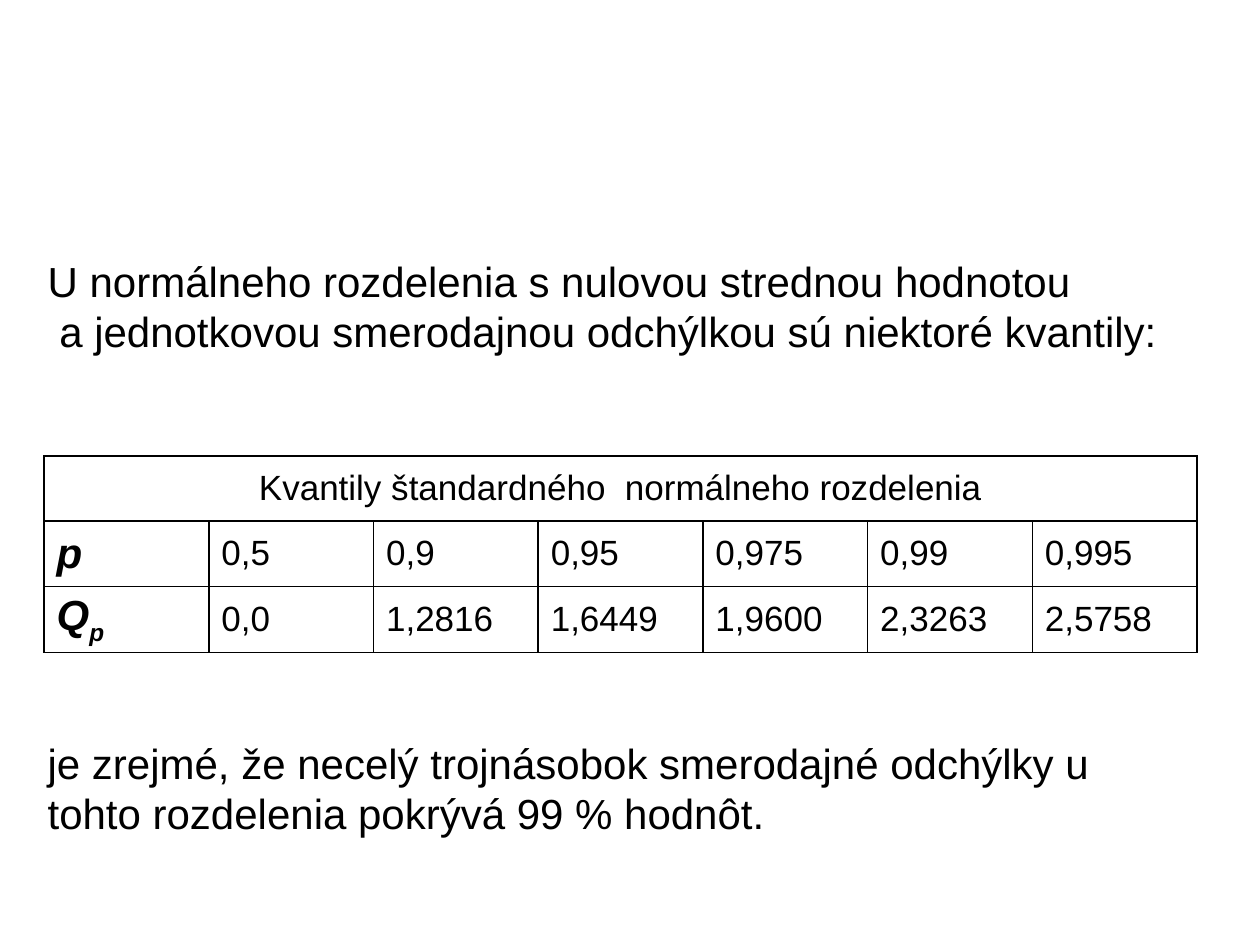
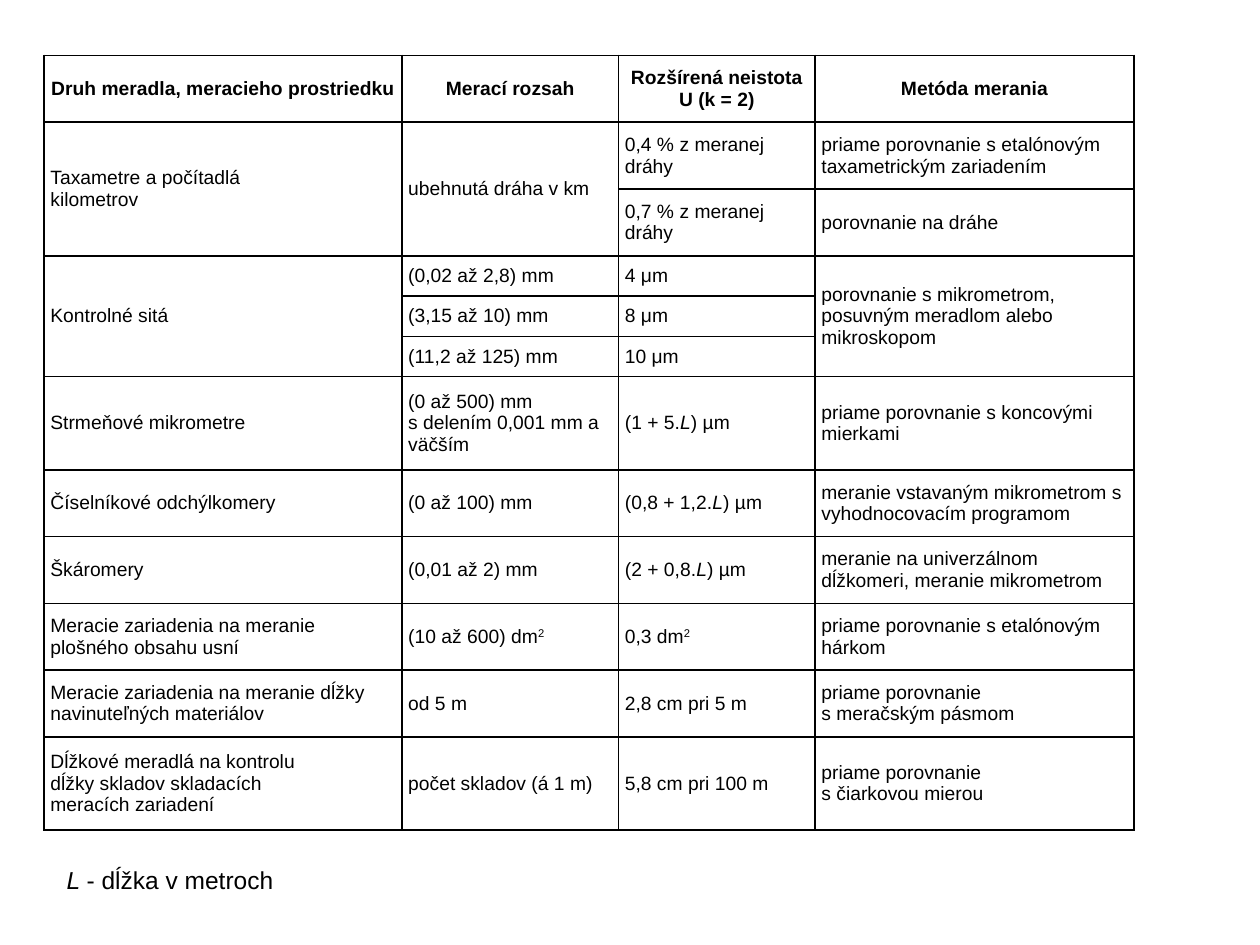
import copy

from lxml import etree
from pptx import Presentation
from pptx.dml.color import RGBColor
from pptx.enum import text
from pptx.oxml import ns
from pptx.util import Inches, Pt

COLORS = {"ink": "000000", "paper": "FFFFFF"}
FONT = "Arial"
TABLE_LEFT = 0.35
ITALIC_L = ("L", {"italic": True})
SQUARED = ("2", {"baseline": 30000})


def write(tf, content, size, bold=False, italic=False, align=text.PP_ALIGN.LEFT):
    """Fill a text frame; content is a list of paragraphs, each a string
    or a list of strings and (string, format) pairs. A newline breaks a line."""
    for i, para in enumerate(content):
        p = tf.paragraphs[0] if i == 0 else tf.add_paragraph()
        p.alignment = align
        for piece in [para] if isinstance(para, str) else para:
            words, fmt = (piece, {}) if isinstance(piece, str) else piece
            for n, line in enumerate(words.split("\n")):
                if n:
                    p.add_line_break()
                    p._p[-1].append(copy.deepcopy(r._r.rPr))
                r = p.add_run()
                r.text = line
                r.font.name, r.font.size = FONT, Pt(size)
                r.font.bold, r.font.italic = bold, fmt.get("italic", italic)
                r.font.color.rgb = RGBColor.from_string(COLORS["ink"])
                if "baseline" in fmt:
                    r._r.rPr.set("baseline", str(fmt["baseline"]))


def add_borders(cell, width=1):
    tc_pr = cell._tc.get_or_add_tcPr()
    for side in ("lnL", "lnR", "lnT", "lnB"):
        ln = etree.SubElement(tc_pr, ns.qn("a:" + side), w=str(Pt(width)))
        fill = etree.SubElement(ln, ns.qn("a:solidFill"))
        etree.SubElement(fill, ns.qn("a:srgbClr"), val=COLORS["ink"])


class Deck:
    def __init__(self):
        self.prs = Presentation()
        self.prs.slide_width, self.prs.slide_height = Inches(10), Inches(7.5)
        self.s = None

    def new_slide(self):
        self.s = self.prs.slides.add_slide(self.prs.slide_layouts[6])

    def text(self, left, top, width, height, content, size,
             anchor=text.MSO_ANCHOR.TOP):
        sp = self.s.shapes.add_textbox(*map(Inches, (left, top, width, height)))
        tf = sp.text_frame
        tf.word_wrap, tf.vertical_anchor = True, anchor
        write(tf, content, size)

    def table(self, top, cols, heights, rows, size, margin, spans, head, stub=None):
        """Draw a ruled table; head formats the first row, stub the first column
        below it, and spans holds (row, column, last row, last column)."""
        frame = self.s.shapes.add_table(
            len(rows), len(cols), Inches(TABLE_LEFT), Inches(top),
            Inches(sum(cols)), Inches(sum(heights)))
        table = frame.table
        table.first_row = table.horz_banding = False
        for column, width in zip(table.columns, cols):
            column.width = Inches(width)
        for row, height in zip(table.rows, heights):
            row.height = Inches(height)
        for i, row in enumerate(rows):
            for j, content in enumerate(row):
                cell = table.cell(i, j)
                cell.margin_left = cell.margin_right = Inches(margin)
                cell.margin_top = cell.margin_bottom = Inches(0.05)
                cell.vertical_anchor = text.MSO_ANCHOR.MIDDLE
                add_borders(cell)
                cell.fill.solid()
                cell.fill.fore_color.rgb = RGBColor.from_string(COLORS["paper"])
                extra = head if i == 0 else stub if j == 0 and stub else {}
                write(cell.text_frame, [content], **{"size": size, **extra})
        for row, col, last_row, last_col in spans:
            table.cell(row, col).merge(table.cell(last_row, last_col))


def quantile_slide(deck):
    deck.new_slide()
    rows = [
        ["Kvantily štandardného  normálneho rozdelenia"] + [""] * 6,
        ["p", "0,5", "0,9", "0,95", "0,975", "0,99", "0,995"],
        [["Q", ("p", {"baseline": -25000})],
         "0,0", "1,2816", "1,6449", "1,9600", "2,3263", "2,5758"],
    ]
    deck.table(3.62, [9.15 / 7] * 7, [1.55 / 3] * 3, rows, size=20, margin=0.1,
               spans=[(0, 0, 0, 6)], head={"align": text.PP_ALIGN.CENTER},
               stub={"size": 24, "bold": True, "italic": True})
    deck.text(0.28, 1.97, 9.1, 0.91,
              ["U normálneho rozdelenia s nulovou strednou hodnotou",
               " a jednotkovou smerodajnou odchýlkou sú niektoré kvantily:"],
              24, text.MSO_ANCHOR.MIDDLE)
    deck.text(0.28, 5.8, 9.1, 0.91,
              ["je zrejmé, že necelý trojnásobok smerodajné odchýlky u",
               "tohto rozdelenia pokrývá 99 % hodnôt."], 24)


def uncertainty_slide(deck):
    deck.new_slide()
    rows = [
        ["Druh meradla, meracieho prostriedku", "Merací rozsah",
         "Rozšírená neistota\nU (k = 2)", "Metóda merania"],
        ["Taxametre a počítadlá\nkilometrov", "ubehnutá dráha v km",
         "0,4 % z meranej dráhy",
         "priame porovnanie s etalónovým taxametrickým zariadením"],
        ["", "", "0,7 % z meranej dráhy", "porovnanie na dráhe"],
        ["Kontrolné sitá", "(0,02 až 2,8) mm", "4 μm",
         "porovnanie s mikrometrom, posuvným meradlom alebo mikroskopom"],
        ["", "(3,15 až 10) mm", "8 μm", ""],
        ["", "(11,2 až 125) mm", "10 μm", ""],
        ["Strmeňové mikrometre", "(0 až 500) mm\ns delením 0,001 mm a väčším",
         ["(1 + 5.", ITALIC_L, ") µm"], "priame porovnanie s koncovými mierkami"],
        ["Číselníkové odchýlkomery", "(0 až 100) mm",
         ["(0,8 + 1,2.", ITALIC_L, ") µm"],
         "meranie vstavaným mikrometrom s vyhodnocovacím programom"],
        ["Škáromery", "(0,01 až 2) mm", ["(2 + 0,8.", ITALIC_L, ") µm"],
         "meranie na univerzálnom dĺžkomeri, meranie mikrometrom"],
        ["Meracie zariadenia na meranie plošného obsahu usní",
         ["(10 až 600) dm", SQUARED], ["0,3 dm", SQUARED],
         "priame porovnanie s etalónovým hárkom"],
        ["Meracie zariadenia na meranie dĺžky navinuteľných materiálov",
         "od 5 m", "2,8 cm pri 5 m", "priame porovnanie\ns meračským pásmom"],
        ["Dĺžkové meradlá na kontrolu\ndĺžky skladov skladacích\nmeracích zariadení",
         "počet skladov (á 1 m)", "5,8 cm pri 100 m",
         "priame porovnanie\ns čiarkovou mierou"],
    ]
    one_line, two_lines, three_lines = 0.32, 0.53, 0.74
    heights = ([two_lines] * 3 + [one_line] * 3 + [three_lines]
               + [two_lines] * 4 + [three_lines])
    deck.table(0.44, [2.84, 1.72, 1.56, 2.53], heights, rows, size=11, margin=0.05,
               spans=[(1, 0, 2, 0), (1, 1, 2, 1), (3, 0, 5, 0), (3, 3, 5, 3)],
               head={"bold": True, "align": text.PP_ALIGN.CENTER})
    deck.text(0.43, 6.82, 3.07, 0.34,
              [[("L ", {"italic": True}), "- dĺžka v metroch"]], 14)


def main():
    deck = Deck()
    quantile_slide(deck)
    uncertainty_slide(deck)
    deck.prs.save("out.pptx")


if __name__ == "__main__":
    main()
